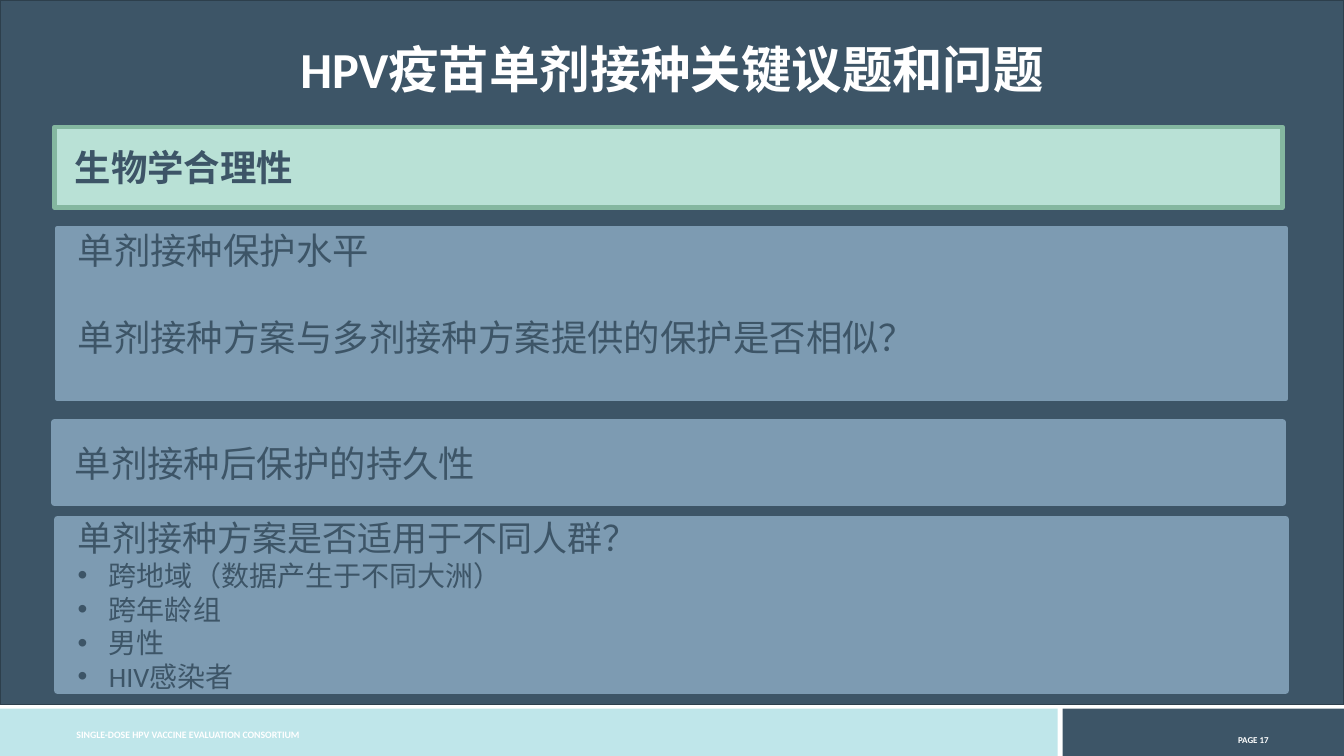
from dataclasses import dataclass
from typing import Optional

from lxml import etree
from pptx import Presentation
from pptx.dml.color import RGBColor
from pptx.enum.shapes import MSO_SHAPE
from pptx.enum.text import MSO_ANCHOR, PP_ALIGN
from pptx.oxml.ns import qn
from pptx.util import Inches, Pt

RECTANGLE = MSO_SHAPE.RECTANGLE
TOP, MIDDLE = MSO_ANCHOR.TOP, MSO_ANCHOR.MIDDLE
LEFT, CENTER, RIGHT = PP_ALIGN.LEFT, PP_ALIGN.CENTER, PP_ALIGN.RIGHT


@dataclass(frozen=True)
class Theme:
    navy: str = "3D5567"
    navy_edge: str = "2D3F4C"
    aqua: str = "BFE6EA"
    slate: str = "7D9BB2"
    mint: str = "B9E1D6"
    mint_edge: str = "84B7A0"
    white: str = "FFFFFF"
    latin: str = "Calibri"
    chinese: str = "Noto Sans CJK SC"
    title: float = 36
    topic: float = 26
    question: float = 25
    bullet: float = 20
    page: float = 11
    footer: float = 7


THEME = Theme()


@dataclass(frozen=True)
class Box:
    left: float
    top: float
    width: float
    height: float


@dataclass(frozen=True)
class Line:
    text: str
    size: float
    font: str = THEME.latin
    color: str = THEME.navy
    bold: bool = False
    align: PP_ALIGN = LEFT
    bullet: bool = False
    before: float = 0
    spacing: Optional[float] = None
    baseline: int = 0


@dataclass(frozen=True)
class Panel:
    box: Box
    lines: tuple[Line, ...]
    fill: str = THEME.slate
    edge: str = THEME.slate
    edge_width: float = 3
    anchor: MSO_ANCHOR = MIDDLE
    inset_top: float = 0.05


BACKDROPS = (
    Panel(Box(0, 7.03, 10.49, 0.47), (), THEME.aqua, edge_width=0),
    Panel(Box(10.54, 7.03, 2.79, 0.47), (), THEME.navy, edge_width=0),
    Panel(Box(0, 0, 13.33, 6.99), (), THEME.navy, THEME.navy_edge, 1),
)

LABELS = (
    (Box(0.66, 7.18, 4.35, 0.22), MIDDLE,
     Line("SINGLE-DOSE HPV VACCINE EVALUATION CONSORTIUM", THEME.footer,
          color=THEME.white, bold=True)),
    (Box(11.07, 7.22, 1.61, 0.22), TOP,
     Line("PAGE 17", THEME.page, color=THEME.white, bold=True, align=RIGHT,
          baseline=30000)),
    (Box(0.09, 0.4, 13.15, 0.95), TOP,
     Line("HPV疫苗单剂接种关键议题和问题", THEME.title, color=THEME.white,
          bold=True, align=CENTER, spacing=0.9)),
)

POPULATIONS = ("跨地域（数据产生于不同大洲）", "跨年龄组", "男性", "HIV感染者")

PANELS = (
    Panel(Box(0.57, 2.26, 12.18, 1.7),
          (Line("单剂接种保护水平", THEME.topic, THEME.chinese),
           Line("单剂接种方案与多剂接种方案提供的保护是否相似？", THEME.topic,
                THEME.chinese, before=31)),
          anchor=TOP, inset_top=0),
    Panel(Box(0.54, 1.26, 12.18, 0.8),
          (Line("生物学合理性", THEME.topic, THEME.chinese, bold=True),),
          THEME.mint, THEME.mint_edge),
    Panel(Box(0.57, 5.15, 12.18, 1.7),
          (Line("单剂接种方案是否适用于不同人群？", THEME.question),
           *(Line(text, THEME.bullet, bullet=True) for text in POPULATIONS)),
          edge_width=5),
    Panel(Box(0.54, 4.19, 12.18, 0.8),
          (Line("单剂接种后保护的持久性", THEME.topic, THEME.chinese),),
          edge_width=4.5),
)


def lengths(box: Box) -> tuple:
    return tuple(Inches(n) for n in (box.left, box.top, box.width, box.height))


def write_line(paragraph, line: Line) -> None:
    paragraph.alignment = line.align
    if line.spacing:
        paragraph.line_spacing = line.spacing
    if line.before:
        paragraph.space_before = Pt(line.before)
    if line.bullet:
        properties = paragraph._p.get_or_add_pPr()
        properties.set("marL", str(Inches(0.31)))
        properties.set("indent", str(-Inches(0.31)))
        etree.SubElement(properties, qn("a:buFont")).set("typeface", "Arial")
        etree.SubElement(properties, qn("a:buChar")).set("char", "•")
    run = paragraph.add_run()
    run.text = line.text
    run.font.name = line.font
    run.font.size = Pt(line.size)
    run.font.bold = line.bold
    run.font.color.rgb = RGBColor.from_string(line.color)
    if line.baseline:
        run._r.get_or_add_rPr().set("baseline", str(line.baseline))


def write_lines(frame, lines: tuple[Line, ...], anchor: MSO_ANCHOR) -> None:
    frame.word_wrap = True
    frame.vertical_anchor = anchor
    for index, line in enumerate(lines):
        paragraph = frame.add_paragraph() if index else frame.paragraphs[0]
        write_line(paragraph, line)


def draw_panel(slide, panel: Panel) -> None:
    shape = slide.shapes.add_shape(RECTANGLE, *lengths(panel.box))
    shape.shadow.inherit = False
    shape.fill.solid()
    shape.fill.fore_color.rgb = RGBColor.from_string(panel.fill)
    if panel.edge_width:
        shape.line.color.rgb = RGBColor.from_string(panel.edge)
        shape.line.width = Pt(panel.edge_width)
    else:
        shape.line.fill.background()
    if panel.lines:
        shape.text_frame.margin_left = Inches(0.2)
        shape.text_frame.margin_top = Inches(panel.inset_top)
        write_lines(shape.text_frame, panel.lines, panel.anchor)


def draw_label(slide, box: Box, anchor: MSO_ANCHOR, line: Line) -> None:
    shape = slide.shapes.add_textbox(*lengths(box))
    write_lines(shape.text_frame, (line,), anchor)


def main() -> None:
    presentation = Presentation()
    presentation.slide_width = Inches(13.33)
    presentation.slide_height = Inches(7.5)
    slide = presentation.slides.add_slide(presentation.slide_layouts[6])

    # Page background and footer bars
    for backdrop in BACKDROPS:
        draw_panel(slide, backdrop)

    # Footer, page number and title
    for box, anchor, line in LABELS:
        draw_label(slide, box, anchor, line)

    # Key questions
    for panel in PANELS:
        draw_panel(slide, panel)

    presentation.save("out.pptx")


if __name__ == "__main__":
    main()
